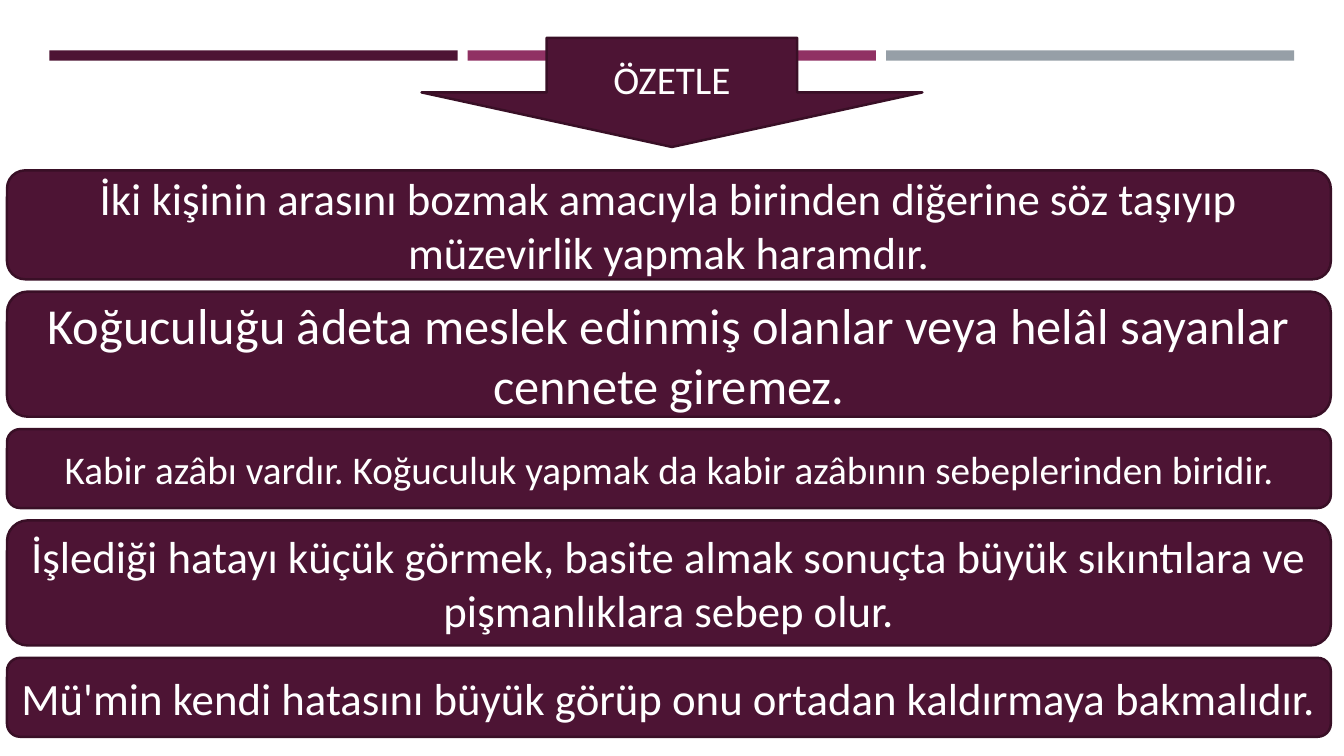
from dataclasses import dataclass

from pptx import Presentation
from pptx.dml.color import RGBColor
from pptx.enum.shapes import MSO_SHAPE
from pptx.enum.text import MSO_ANCHOR, PP_ALIGN
from pptx.util import Pt


@dataclass(frozen=True)
class Theme:
    plum: RGBColor = RGBColor(0x4D, 0x14, 0x34)
    magenta: RGBColor = RGBColor(0x90, 0x31, 0x63)
    gray: RGBColor = RGBColor(0x96, 0x9F, 0xA7)
    outline: RGBColor = RGBColor(0x39, 0x0F, 0x26)
    text: RGBColor = RGBColor(0xFF, 0xFF, 0xFF)
    font: str = "Calibri"
    small: int = 28
    medium: int = 32
    large: int = 36


THEME = Theme()
BAR_LEFT, BAR_TOP, BAR_WIDTH, BAR_HEIGHT, BAR_GAP = 35.3, 36, 291.6, 7.4, 7.2
CARD_LEFT, CARD_TOP, CARD_WIDTH, CARD_GAP = 5, 121.7, 945.6, 8.8

# Wording, type size and card height
CARDS = (
    ("İki kişinin arasını bozmak amacıyla birinden diğerine söz taşıyıp "
     "müzevirlik yapmak haramdır.", THEME.medium, 77.8),
    ("Koğuculuğu âdeta meslek edinmiş olanlar veya helâl sayanlar "
     "cennete giremez.", THEME.large, 89.4),
    ("Kabir azâbı vardır. Koğuculuk yapmak da kabir azâbının "
     "sebeplerinden biridir.", THEME.small, 56.4),
    ("İşlediği hatayı küçük görmek, basite almak sonuçta büyük sıkıntılara ve "
     "pişmanlıklara sebep olur.", THEME.medium, 89.4),
    ("Mü'min kendi hatasını büyük görüp onu ortadan kaldırmaya bakmalıdır.",
     THEME.medium, 56.4),
)


def add_filled_shape(slide, preset, left, top, width, height, color):
    shape = slide.shapes.add_shape(preset, Pt(left), Pt(top), Pt(width), Pt(height))
    shape.shadow.inherit = False
    shape.fill.solid()
    shape.fill.fore_color.rgb = color
    shape.line.fill.background()
    return shape


def add_message(slide, preset, left, top, width, height, wording, size):
    """Add an outlined plum shape with centred white wording."""
    message = add_filled_shape(slide, preset, left, top, width, height, THEME.plum)
    message.line.color.rgb = THEME.outline
    message.line.width = Pt(1.75)
    frame = message.text_frame
    frame.text = wording
    frame.word_wrap = True
    frame.vertical_anchor = MSO_ANCHOR.MIDDLE
    paragraph = frame.paragraphs[0]
    paragraph.alignment = PP_ALIGN.CENTER
    font = paragraph.runs[0].font
    font.name = THEME.font
    font.size = Pt(size)
    font.color.rgb = THEME.text


def add_top_bars(slide):
    for column, color in enumerate((THEME.plum, THEME.magenta, THEME.gray)):
        left = BAR_LEFT + column * (BAR_WIDTH + BAR_GAP)
        add_filled_shape(slide, MSO_SHAPE.RECTANGLE, left, BAR_TOP,
                         BAR_WIDTH, BAR_HEIGHT, color)


def add_cards(slide):
    top = CARD_TOP
    for wording, size, height in CARDS:
        add_message(slide, MSO_SHAPE.ROUNDED_RECTANGLE, CARD_LEFT, top,
                    CARD_WIDTH, height, wording, size)
        top += height + CARD_GAP


def main():
    presentation = Presentation()
    presentation.slide_width, presentation.slide_height = Pt(960), Pt(540)
    slide = presentation.slides.add_slide(presentation.slide_layouts[6])
    add_top_bars(slide)
    add_message(slide, MSO_SHAPE.DOWN_ARROW, 301.1, 27, 357.8, 78,
                "ÖZETLE", THEME.small)
    add_cards(slide)
    presentation.save("out.pptx")


if __name__ == "__main__":
    main()
